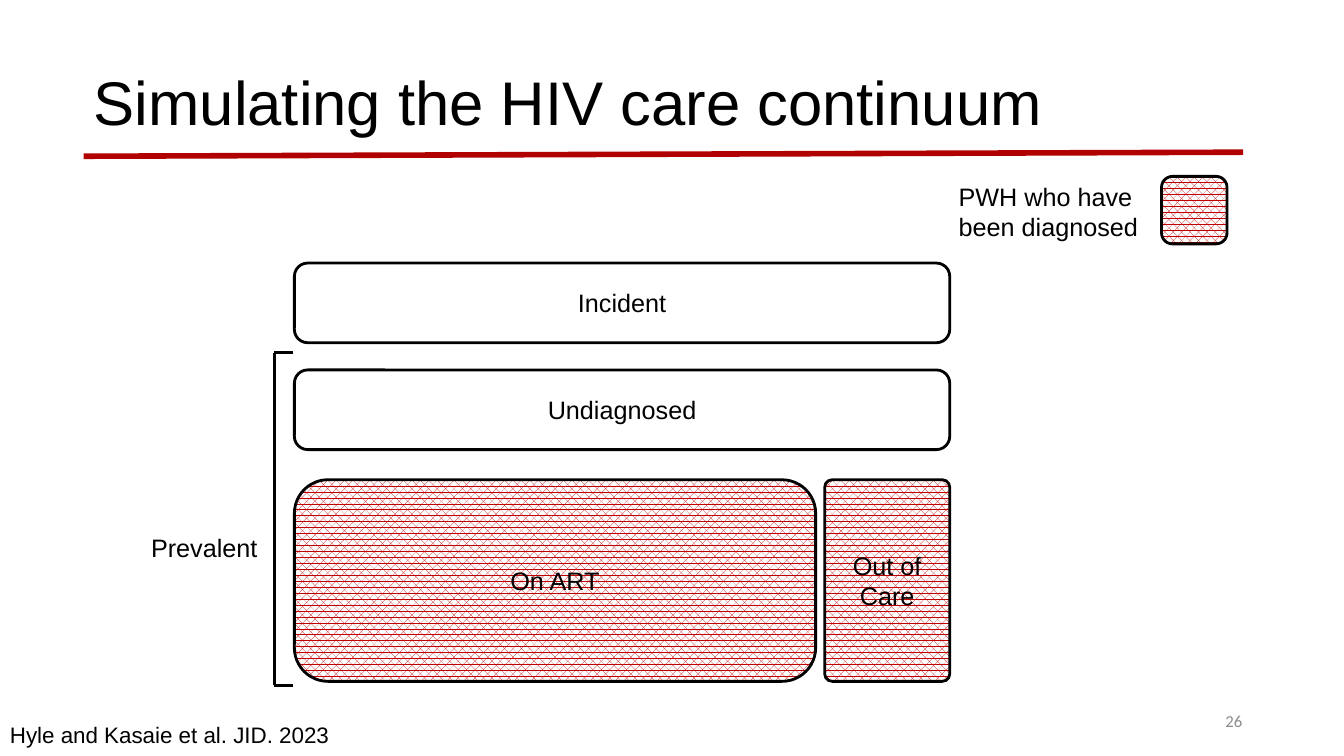
import dataclasses

import pptx
import pptx.dml.color
import pptx.enum.dml
import pptx.enum.shapes
import pptx.enum.text
import pptx.oxml.ns
import pptx.util
from lxml import etree

ALIGN = pptx.enum.text.PP_ALIGN
ANCHOR = pptx.enum.text.MSO_ANCHOR


@dataclasses.dataclass(frozen=True)
class Theme:
    ink: str = "000000"
    paper: str = "FFFFFF"
    rule: str = "B00000"
    diagnosed: str = "C00000"
    muted: str = "8C8C8C"
    font: str = "Arial"
    number_font: str = "Calibri"
    title_size: int = 44
    label_size: int = 18
    citation_size: int = 16
    number_size: int = 12
    outline: int = 2
    rule_width: int = 4


THEME = Theme()


def px(length):
    """Turn px, at 100 to the inch, into EMU."""
    return pptx.util.Emu(length * 9144)


def rgb(colour):
    return pptx.dml.color.RGBColor.from_string(colour)


def apply(target, formats):
    for name, value in formats.items():
        setattr(target, name, value)


def write(frame, lines, size=THEME.label_size, font=THEME.font, colour=THEME.ink,
          align=ALIGN.LEFT, anchor=ANCHOR.TOP, wrap=True, spacing=None):
    apply(frame, {"text": "\n".join(lines), "word_wrap": wrap, "vertical_anchor": anchor})
    for paragraph in frame.paragraphs:
        apply(paragraph, {"alignment": align, "line_spacing": spacing})
        apply(paragraph.font, {"name": font, "size": pptx.util.Pt(size)})
        paragraph.font.color.rgb = rgb(colour)


def add_label(slide, box, lines, **formats):
    label = slide.shapes.add_textbox(*map(px, box))
    write(label.text_frame, lines, **formats)


def add_line(slide, start, end, colour=THEME.ink, width=THEME.outline):
    line = slide.shapes.add_connector(
        pptx.enum.shapes.MSO_CONNECTOR.STRAIGHT, *map(px, (*start, *end)))
    line.line.color.rgb = rgb(colour)
    line.line.width = pptx.util.Pt(width)
    etree.SubElement(line._element.spPr, pptx.oxml.ns.qn("a:effectLst"))


def add_group_box(slide, box, text="", diagnosed=False, rounding=None):
    """Add a rounded box for one group of people, patterned if diagnosed."""
    group = slide.shapes.add_shape(
        pptx.enum.shapes.MSO_SHAPE.ROUNDED_RECTANGLE, *map(px, box))
    group.shadow.inherit = False
    if rounding is not None:
        group.adjustments[0] = rounding
    if diagnosed:
        group.fill.patterned()
        group.fill.pattern = pptx.enum.dml.MSO_PATTERN.PERCENT_60
        group.fill.fore_color.rgb = rgb(THEME.diagnosed)
        group.fill.back_color.rgb = rgb(THEME.paper)
    else:
        group.fill.background()
    group.line.color.rgb = rgb(THEME.ink)
    group.line.width = pptx.util.Pt(THEME.outline)
    if text:
        write(group.text_frame, [text], align=ALIGN.CENTER, anchor=ANCHOR.MIDDLE)


def add_header(slide, box):
    left, top, width, height = box
    title = slide.shapes.title
    apply(title, dict(zip(("left", "top", "width", "height"), map(px, box))))
    write(title.text_frame, ["Simulating the HIV care continuum"],
          size=THEME.title_size, anchor=ANCHOR.MIDDLE, spacing=0.9)
    add_line(slide, (left, top + 123), (left + width, top + 119),
             THEME.rule, THEME.rule_width)


def add_legend(slide, box):
    left, top, width, height = box
    add_label(slide, (left, top, 260, height), ["PWH who have", "been diagnosed"])
    add_group_box(slide, (left + width - 65, top, 65, 67), diagnosed=True)


def add_continuum(slide, box):
    left, top, width, height = box
    bar_height, care_height, care_gap = 79, 200, 9
    care_top = top + height - care_height
    art_width = 517
    art_right = left + art_width + care_gap
    add_group_box(slide, (left, top, width, bar_height), "Incident")
    add_group_box(slide, (left, top + 106, width, bar_height), "Undiagnosed")
    add_group_box(slide, (left, care_top, art_width, care_height), "On ART", True)
    add_group_box(slide, (art_right, care_top, width - art_width - care_gap, care_height),
                  "Out of Care", True, 0.06)


def add_prevalent_bracket(slide, box):
    left, top, width, height = box
    bottom = top + height
    add_line(slide, (left, top), (left, bottom))
    for tick in (top, bottom):
        add_line(slide, (left, tick), (left + width, tick))
    add_label(slide, (left - 132, top + 173, 196, 40), ["Prevalent"])


def add_footer(slide, box):
    left, top, width, height = box
    add_label(slide, (left, top + 16, 341, 37), ["Hyle and Kasaie et al. JID. 2023"],
              size=THEME.citation_size, wrap=False)
    add_label(slide, (left + width - 300, top, 300, 40), ["26"],
              size=THEME.number_size, font=THEME.number_font, colour=THEME.muted,
              align=ALIGN.RIGHT, anchor=ANCHOR.MIDDLE)


def main():
    deck = pptx.Presentation()
    apply(deck, {"slide_width": px(1333), "slide_height": px(750)})
    slide = deck.slides.add_slide(deck.slide_layouts.get_by_name("Title Only"))
    add_header(slide, (83, 32, 1150, 145))
    add_legend(slide, (941, 175, 276, 71))
    add_continuum(slide, (292, 261, 650, 415))
    add_prevalent_bracket(slide, (272, 350, 19, 330))
    add_footer(slide, (0, 695, 1242, 55))
    deck.save("out.pptx")


if __name__ == "__main__":
    main()
